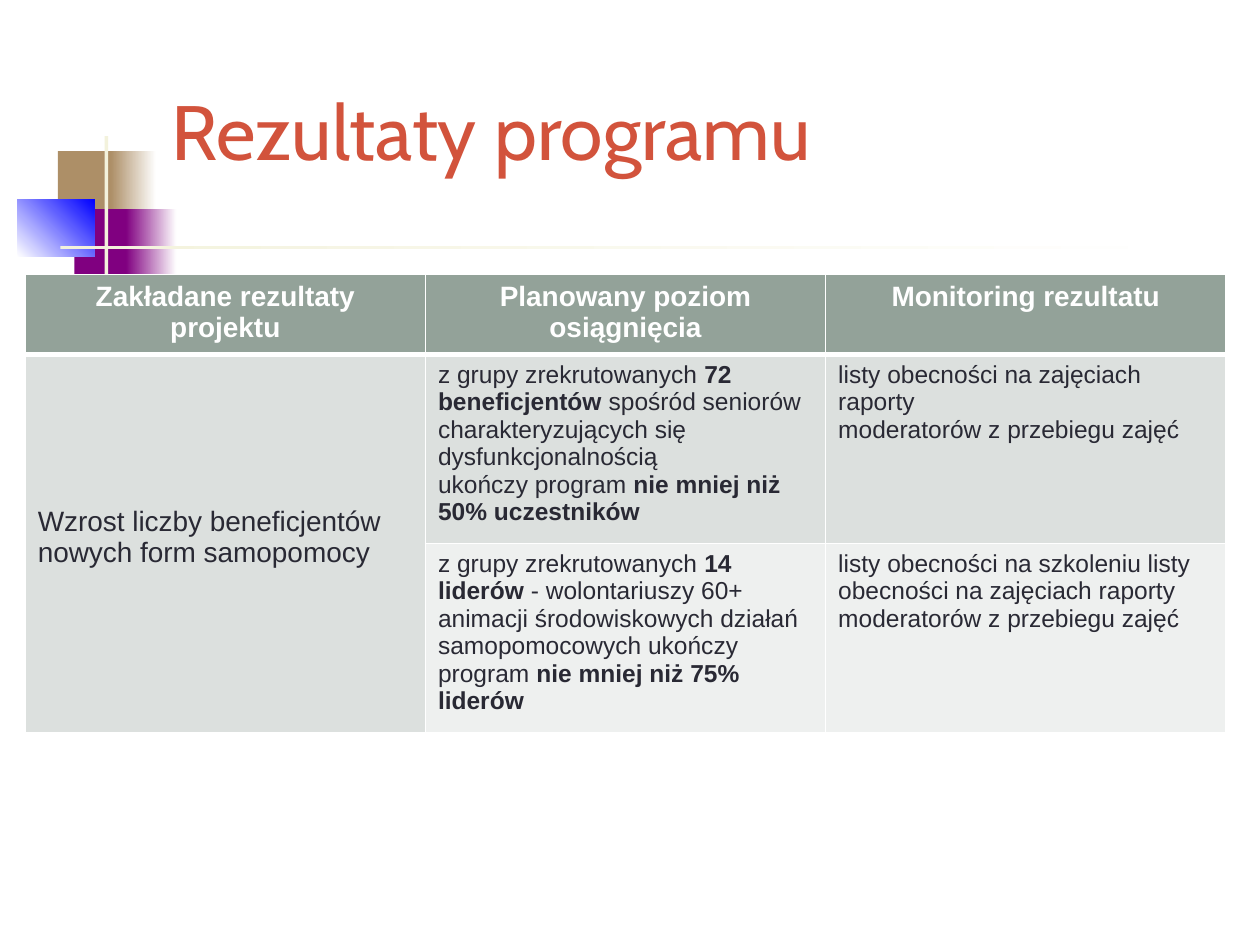
from lxml import etree
from pptx import Presentation
from pptx.dml.color import RGBColor
from pptx.enum.shapes import MSO_SHAPE
from pptx.enum.text import MSO_ANCHOR, PP_ALIGN
from pptx.oxml.ns import qn
from pptx.util import Inches, Pt

RECT = MSO_SHAPE.RECTANGLE
MIDDLE, TOP = MSO_ANCHOR.MIDDLE, MSO_ANCHOR.TOP
LEFT, CENTER = PP_ALIGN.LEFT, PP_ALIGN.CENTER

THEME = {
    "white": "FFFFFF", "tan": "AD8F67", "purple": "800080", "blue": "0000FF",
    "cream": "F3F2DC", "title": "D2533C", "text": "292934",
    "header": "93A299", "band1": "DCE0DE", "band2": "EEF0EF",
    "title_size": 44, "head_size": 16, "body_size": 14,
    "title_font": "Cabin", "body_font": "Arial",
}


def color(name):
    return RGBColor.from_string(THEME[name])


def write(tf, paragraphs, align, font, size, ink, bold=False):
    for i, runs in enumerate(paragraphs):
        p = tf.paragraphs[0] if i == 0 else tf.add_paragraph()
        p.alignment = align
        for j, text in enumerate(runs):
            r = p.add_run()
            r.text = text
            fmt = {"name": THEME[font], "size": Pt(THEME[size]), "bold": bold or j % 2 == 1}
            for key, value in fmt.items():
                setattr(r.font, key, value)
            r.font.color.rgb = color(ink)


prs = Presentation()
prs.slide_width, prs.slide_height = Inches(10), Inches(7.5)
s = prs.slides.add_slide(prs.slide_layouts[6])

ornaments = [
    (0.46, 1.2, 0.48, 0.52, ["tan"], 0),
    (0.88, 1.2, 0.36, 0.52, ["tan", "white"], 0),
    (0.59, 1.66, 0.46, 0.52, ["purple"], 0),
    (1, 1.66, 0.4, 0.52, ["purple", "white"], 0),
    (0.14, 1.58, 0.61, 0.46, ["white", "blue"], 45),
    (0.83, 1.08, 0.03, 1.15, ["cream"], 0),
    (0.48, 1.95, 9, 0.03, ["cream", "white"], 0),
]
for x, y, w, h, colors, angle in ornaments:
    sp = s.shapes.add_shape(RECT, Inches(x), Inches(y), Inches(w), Inches(h))
    sp.shadow.inherit = False
    sp.line.fill.background()
    if len(colors) == 1:
        sp.fill.solid()
        sp.fill.fore_color.rgb = color(colors[0])
    else:
        sp.fill.gradient()
        sp.fill.gradient_angle = angle
        for stop, name, position in zip(sp.fill.gradient_stops, colors, (0, 1)):
            stop.color.rgb = color(name)
            stop.position = position

title = s.shapes.add_textbox(Inches(1.26), Inches(0.23), Inches(8.52), Inches(1.6))
tf = title.text_frame
tf.word_wrap = True
tf.vertical_anchor = MIDDLE
write(tf, [["Rezultaty programu"]], LEFT, "title_font", "title_size", "title")

# Runs at odd positions are bold.
rows = [
    [[["Zakładane rezultaty projektu"]],
     [["Planowany poziom osiągnięcia"]],
     [["Monitoring rezultatu"]]],
    [[["Wzrost liczby beneficjentów"], ["nowych form samopomocy"]],
     [["z grupy zrekrutowanych ", "72 beneficjentów",
       " spośród seniorów charakteryzujących się dysfunkcjonalnością"],
      ["ukończy program ", "nie mniej niż 50% uczestników"]],
     [["listy obecności na zajęciach raporty"], ["moderatorów z przebiegu zajęć"]]],
    [[],
     [["z grupy zrekrutowanych ", "14 liderów ",
       "- wolontariuszy 60+ animacji środowiskowych działań samopomocowych ukończy program ",
       "nie mniej niż 75% liderów"]],
     [["listy obecności na szkoleniu listy obecności na zajęciach raporty "
       "moderatorów z przebiegu zajęć"]]],
]
heights = [0.59, 1.41, 1.41]
fills = ["header", "band1", "band2"]
frame = s.shapes.add_table(3, 3, Inches(0.2), Inches(2.18), Inches(9.53), Inches(sum(heights)))
table = frame.table
table.cell(1, 0).merge(table.cell(2, 0))

for i, cells in enumerate(rows):
    table.rows[i].height = Inches(heights[i])
    for j, paragraphs in enumerate(cells):
        cell = table.cell(i, j)
        cell.fill.solid()
        cell.fill.fore_color.rgb = color("band1" if i and j == 0 else fills[i])
        size = "head_size" if i == 0 or j == 0 else "body_size"
        cell.vertical_anchor = MIDDLE if i and j == 0 else TOP
        if i and j == 0:
            cell.margin_bottom = Inches(0.15)
        write(cell.text_frame, paragraphs, LEFT if i else CENTER, "body_font", size,
              "text" if i else "white", i == 0)
        props = cell._tc.get_or_add_tcPr()
        for k, side in enumerate(("lnL", "lnR", "lnT", "lnB")):
            thick = (i, side) in ((0, "lnB"), (1, "lnT"))
            line = etree.Element(qn("a:" + side), w=str(Pt(3 if thick else 1)))
            fill = etree.SubElement(line, qn("a:solidFill"))
            etree.SubElement(fill, qn("a:srgbClr"), val=THEME["white"])
            props.insert(k, line)

prs.save("out.pptx")
